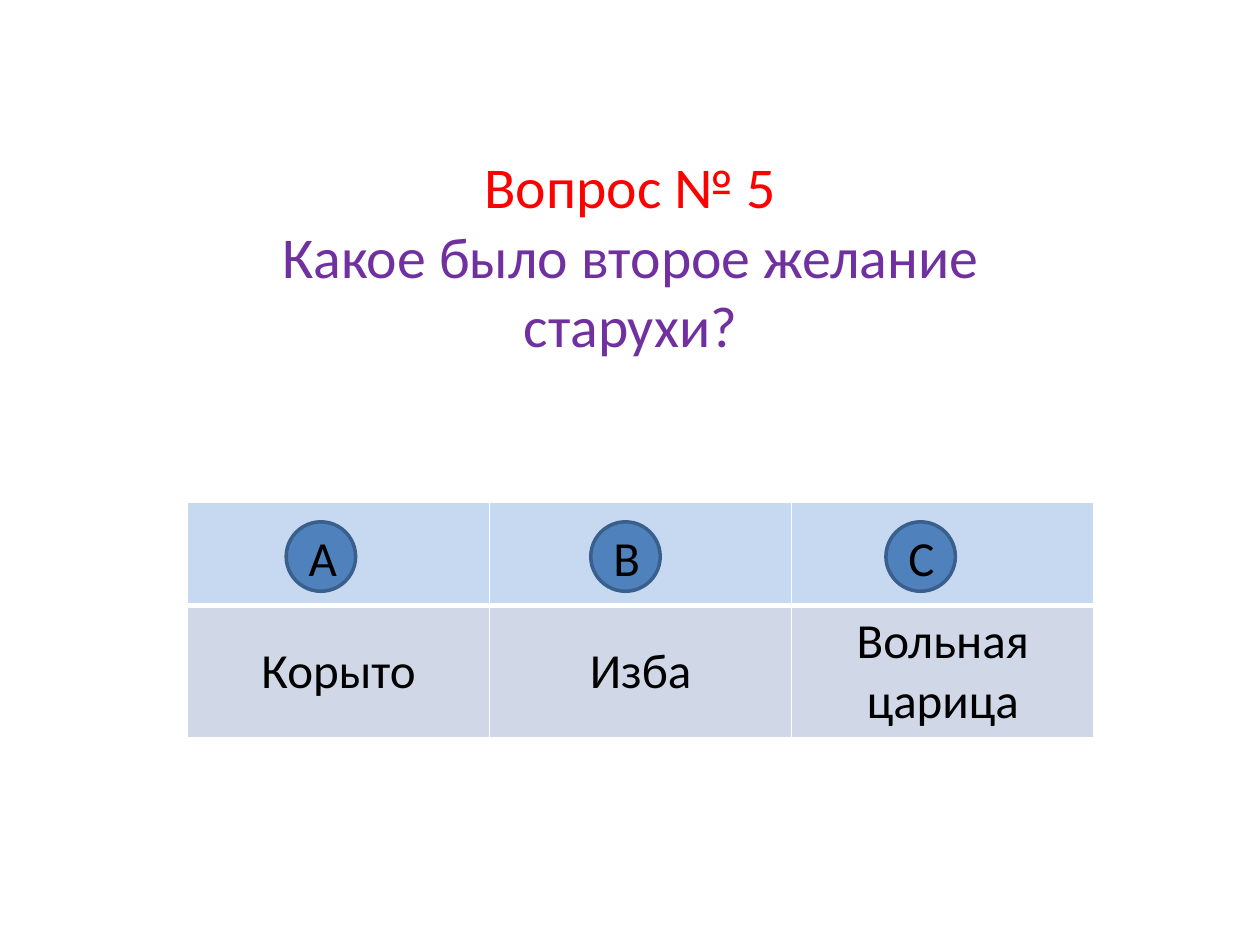
from dataclasses import dataclass

from lxml.etree import SubElement
from pptx import Presentation
from pptx.dml.color import RGBColor
from pptx.enum.shapes import MSO_SHAPE
from pptx.enum.text import MSO_ANCHOR, MSO_AUTO_SIZE, PP_ALIGN
from pptx.oxml.ns import qn
from pptx.slide import Slide
from pptx.table import _Cell
from pptx.text.text import TextFrame, _Run
from pptx.util import Cm, Pt


@dataclass(frozen=True)
class Theme:
    font: str = "Calibri"
    title_size: float = 33
    body_size: float = 28
    heading: str = "FF0000"
    question: str = "7030A0"
    text: str = "000000"
    white: str = "FFFFFF"
    header_fill: str = "C6D9F1"
    answer_fill: str = "D0D8E8"
    badge_fill: str = "4F81BD"
    badge_line: str = "3A5F8C"


@dataclass(frozen=True)
class Option:
    letter: str
    answer: str
    badge_left: float


THEME = Theme()
OPTIONS = [
    Option("А", "Корыто", 5.77),
    Option("В", "Изба", 11.91),
    Option("С", "Вольная царица", 17.86),
]
COLUMN_WIDTH = 6.09
ROW_HEIGHTS = (2.08, 2.62)


def color(value: str) -> RGBColor:
    return RGBColor.from_string(value)


def format_run(run: _Run, size: float, value: str) -> None:
    run.font.name = THEME.font
    run.font.size = Pt(size)
    run.font.color.rgb = color(value)


def write_centered(text_frame: TextFrame, text: str) -> None:
    text_frame.text = text
    paragraph = text_frame.paragraphs[0]
    paragraph.alignment = PP_ALIGN.CENTER
    format_run(paragraph.runs[0], THEME.body_size, THEME.text)


def style_cell(cell: _Cell, fill: str, top: float, bottom: float) -> None:
    cell.vertical_anchor = MSO_ANCHOR.MIDDLE
    properties = cell._tc.get_or_add_tcPr()
    for side, width in (("L", 1), ("R", 1), ("T", top), ("B", bottom)):
        border = SubElement(properties, qn(f"a:ln{side}"), w=str(Pt(width)))
        border_fill = SubElement(border, qn("a:solidFill"))
        SubElement(border_fill, qn("a:srgbClr"), val=THEME.white)
    cell.fill.solid()
    cell.fill.fore_color.rgb = color(fill)


def add_title(slide: Slide) -> None:
    title = slide.shapes.title
    title.left, title.top = Cm(3.58), Cm(0.76)
    title.width, title.height = Cm(18.26), Cm(8.76)
    title.fill.solid()
    title.fill.fore_color.rgb = color(THEME.white)
    text_frame = title.text_frame
    text_frame.text = "Вопрос № 5\vКакое было второе желание старухи?"
    text_frame.word_wrap = True
    text_frame.auto_size = MSO_AUTO_SIZE.NONE
    text_frame.vertical_anchor = MSO_ANCHOR.MIDDLE
    paragraph = text_frame.paragraphs[0]
    paragraph.alignment = PP_ALIGN.CENTER
    for run, value in zip(paragraph.runs, (THEME.heading, THEME.question)):
        format_run(run, THEME.title_size, value)


def add_answer_table(slide: Slide) -> None:
    table = slide.shapes.add_table(
        len(ROW_HEIGHTS), len(OPTIONS), Cm(3.78), Cm(10.12),
        Cm(COLUMN_WIDTH * len(OPTIONS)), Cm(sum(ROW_HEIGHTS)),
    ).table
    for row, height in zip(table.rows, ROW_HEIGHTS):
        row.height = Cm(height)
    for index, option in enumerate(OPTIONS):
        table.columns[index].width = Cm(COLUMN_WIDTH)
        style_cell(table.cell(0, index), THEME.header_fill, 1, 3)
        answer = table.cell(1, index)
        style_cell(answer, THEME.answer_fill, 3, 1)
        write_centered(answer.text_frame, option.answer)


def add_badge(slide: Slide, option: Option) -> None:
    badge = slide.shapes.add_shape(
        MSO_SHAPE.OVAL, Cm(option.badge_left), Cm(10.52), Cm(1.4), Cm(1.4)
    )
    badge.shadow.inherit = False
    badge.fill.solid()
    badge.fill.fore_color.rgb = color(THEME.badge_fill)
    badge.line.color.rgb = color(THEME.badge_line)
    badge.line.width = Pt(2)
    badge.text_frame.vertical_anchor = MSO_ANCHOR.MIDDLE
    write_centered(badge.text_frame, option.letter)


def main() -> None:
    presentation = Presentation()
    presentation.slide_width, presentation.slide_height = Cm(25.4), Cm(19.05)
    slide = presentation.slides.add_slide(presentation.slide_layouts[5])
    add_title(slide)
    add_answer_table(slide)
    for option in OPTIONS:
        add_badge(slide, option)
    presentation.save("out.pptx")


if __name__ == "__main__":
    main()
